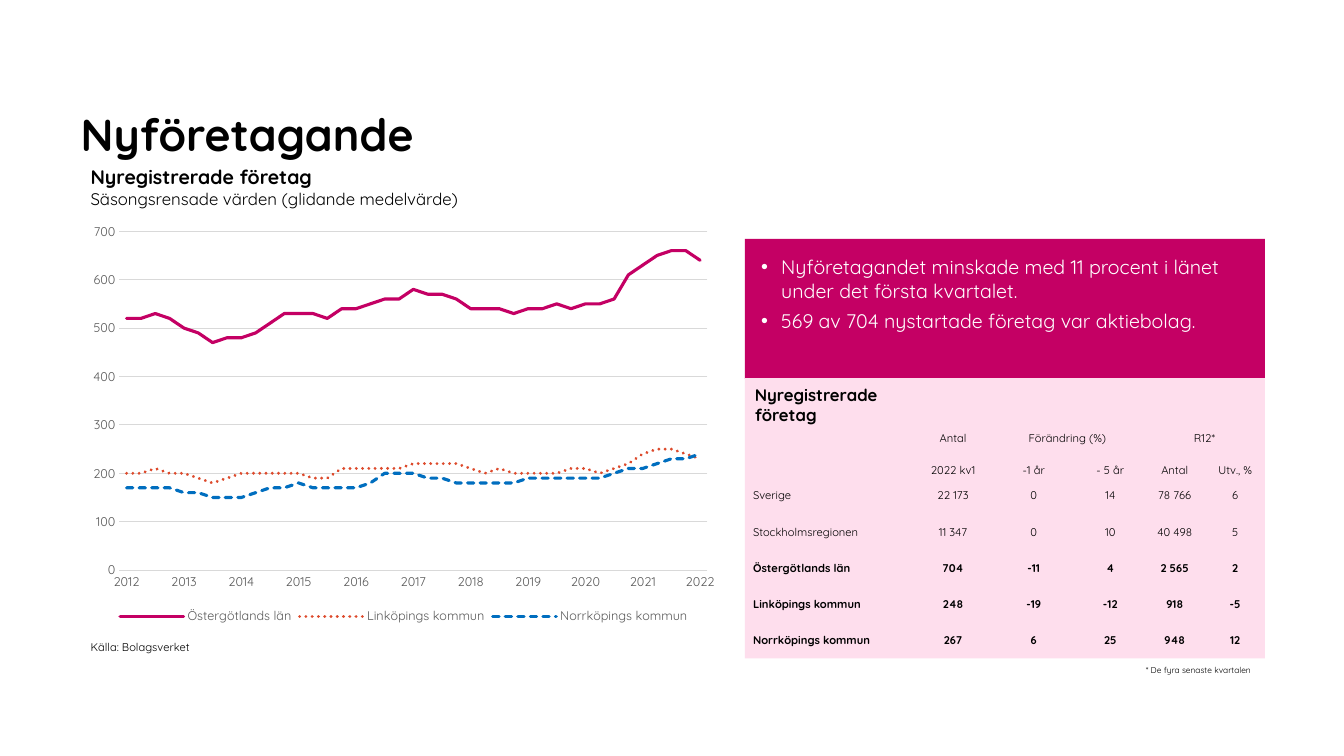
from lxml import etree
from pptx import Presentation
from pptx.chart.data import CategoryChartData
from pptx.dml.color import RGBColor
from pptx.enum.chart import XL_CHART_TYPE, XL_LEGEND_POSITION, XL_TICK_MARK
from pptx.enum.dml import MSO_LINE_DASH_STYLE
from pptx.enum.shapes import MSO_SHAPE
from pptx.enum.text import MSO_ANCHOR, MSO_AUTO_SIZE, PP_ALIGN
from pptx.oxml.ns import qn
from pptx.util import Pt

LEFT, CENTER = PP_ALIGN.LEFT, PP_ALIGN.CENTER
MIDDLE, BOTTOM = MSO_ANCHOR.MIDDLE, MSO_ANCHOR.BOTTOM
NO_TICK = XL_TICK_MARK.NONE
SOLID = MSO_LINE_DASH_STYLE.SOLID
DOTS = MSO_LINE_DASH_STYLE.ROUND_DOT
DASHES = MSO_LINE_DASH_STYLE.SQUARE_DOT
FONT = "Quicksand"
PLAIN_TABLE_STYLE = "{2D5ABB26-0587-4C30-8999-92F81FD0307C}"
COLORS = {"black": "000000", "white": "FFFFFF", "grey": "595959", "grid": "D9D9D9",
          "magenta": "C40064", "pink": "FEDEED", "orange": "DD4A2C", "blue": "006EBF"}
YEARS = range(2012, 2023)
SERIES = [
    ("Östergötlands län", "magenta", SOLID,
     [520, 520, 530, 520, 500, 490, 470, 480, 480, 490, 510, 530, 530, 530, 520,
      540, 540, 550, 560, 560, 580, 570, 570, 560, 540, 540, 540, 530, 540, 540,
      550, 540, 550, 550, 560, 610, 630, 650, 660, 660, 640]),
    ("Linköpings kommun", "orange", DOTS,
     [200, 200, 210, 200, 200, 190, 180, 190, 200, 200, 200, 200, 200, 190, 190,
      210, 210, 210, 210, 210, 220, 220, 220, 220, 210, 200, 210, 200, 200, 200,
      200, 210, 210, 200, 210, 220, 240, 250, 250, 240, 230]),
    ("Norrköpings kommun", "blue", DASHES,
     [170, 170, 170, 170, 160, 160, 150, 150, 150, 160, 170, 170, 180, 170, 170,
      170, 170, 180, 200, 200, 200, 190, 190, 180, 180, 180, 180, 180, 190, 190,
      190, 190, 190, 190, 200, 210, 210, 220, 230, 230, 240]),
]
COLUMN_WIDTHS = [121.7, 54, 61.2, 48.2, 43.9, 42.5]
ROW_HEIGHTS = [21.6, 23] + [25.9] * 5
HEADER_ROWS = 2
FIRST_BOLD_ROW = 4
ROWS = [
    ["", "Antal", "Förändring (%)", "", "R12*", ""],
    ["", "2022 kv1", "-1 år", "- 5 år", "Antal", "Utv., %"],
    ["Sverige", "22 173", "0", "14", "78 766", "6"],
    ["Stockholmsregionen", "11 347", "0", "10", "40 498", "5"],
    ["Östergötlands län", "704", "-11", "4", "2 565", "2"],
    ["Linköpings kommun", "248", "-19", "-12", "918", "-5"],
    ["Norrköpings kommun", "267", "6", "25", "948", "12"],
]
BULLETS = ["Nyföretagandet minskade med 11 procent i länet under det första kvartalet.",
           "569 av 704 nystartade företag var aktiebolag."]


def rgb(name):
    """Return the named colour."""
    return RGBColor.from_string(COLORS[name])


def format_font(font, size, color="black", bold=False):
    """Set face, size, colour and weight of a font."""
    font.name, font.size, font.bold = FONT, Pt(size), bold
    font.color.rgb = rgb(color)


def set_margins(text_frame, margin):
    """Give a text frame the same margin on all four sides."""
    text_frame.margin_left = text_frame.margin_right = Pt(margin)
    text_frame.margin_top = text_frame.margin_bottom = Pt(margin)


def place(shape, left, top, width, height):
    """Move and size a shape, in points."""
    shape.left, shape.top = Pt(left), Pt(top)
    shape.width, shape.height = Pt(width), Pt(height)


def add_label(slide, text, left, top, width, height, formats):
    """Add a text box whose runs take the given sizes and weights."""
    text_frame = slide.shapes.add_textbox(Pt(left), Pt(top), Pt(width), Pt(height)).text_frame
    text_frame.word_wrap = True
    text_frame.text = text
    for run, (size, bold) in zip(text_frame.paragraphs[0].runs, formats):
        format_font(run.font, size, bold=bold)


def add_title(slide, left, top, width, height):
    """Fill the title placeholder."""
    title = slide.shapes.title
    place(title, left, top, width, height)
    text_frame = title.text_frame
    text_frame.text = "Nyföretagande"
    text_frame.vertical_anchor = BOTTOM
    text_frame.auto_size = MSO_AUTO_SIZE.NONE
    set_margins(text_frame, 0)
    paragraph = text_frame.paragraphs[0]
    paragraph.alignment = LEFT
    format_font(paragraph.runs[0].font, 32, bold=True)


def add_bullets(slide, left, top, width, height):
    """Fill the body placeholder as a magenta panel with bullets."""
    body = slide.placeholders[1]
    place(body, left, top, width, height)
    body.fill.solid()
    body.fill.fore_color.rgb = rgb("magenta")
    text_frame = body.text_frame
    text_frame.text = "\n".join(BULLETS)
    text_frame.auto_size = MSO_AUTO_SIZE.NONE
    set_margins(text_frame, 11.5)
    for index, paragraph in enumerate(text_frame.paragraphs):
        paragraph.level = 4
        properties = paragraph._p.get_or_add_pPr()
        properties.set("marL", str(Pt(14.4)))
        properties.set("indent", str(Pt(-14.4)))
        etree.SubElement(properties, qn("a:buFont")).set("typeface", "Arial")
        etree.SubElement(properties, qn("a:buChar")).set("char", "•")
        paragraph.space_before = Pt(5 if index else 0)
        format_font(paragraph.runs[0].font, 14, "white")


def set_plot_area(chart, x, y, w, h):
    """Fix the inner plot area as fractions of the chart."""
    plot_area = chart._chartSpace.chart.plotArea
    for old in plot_area.findall(qn("c:layout")):
        plot_area.remove(old)
    layout = etree.Element(qn("c:layout"))
    manual = etree.SubElement(layout, qn("c:manualLayout"))
    values = {"layoutTarget": "inner", "xMode": "edge", "yMode": "edge",
              "x": x, "y": y, "w": w, "h": h}
    for name, value in values.items():
        etree.SubElement(manual, qn(f"c:{name}")).set("val", str(value))
    plot_area.insert(0, layout)


def add_line_chart(slide, left, top, width, height):
    """Add the quarterly line chart with its heading and source."""
    add_label(slide, "Nyregistrerade företag\vSäsongsrensade värden (glidande medelvärde)",
              left, top - 39, 297.4, 39, [(14, True), (12, False)])
    data = CategoryChartData()
    quarters = [label for year in YEARS for label in (str(year), "", "", "")]
    data.categories = quarters[:len(SERIES[0][3])]
    for name, _, _, values in SERIES:
        data.add_series(name, values)
    chart = slide.shapes.add_chart(XL_CHART_TYPE.LINE, Pt(left), Pt(top), Pt(width),
                                   Pt(height), data).chart
    format_font(chart.font, 10)
    chart.has_title = False
    chart.has_legend = True
    chart.legend.position = XL_LEGEND_POSITION.BOTTOM
    chart.legend.include_in_layout = False
    format_font(chart.legend.font, 9, "grey")
    for axis in (chart.category_axis, chart.value_axis):
        axis.major_tick_mark = axis.minor_tick_mark = NO_TICK
        format_font(axis.tick_labels.font, 9, "grey")
    category_axis, value_axis = chart.category_axis, chart.value_axis
    category_axis._element.find(qn("c:txPr")).find(qn("a:bodyPr")).set("rot", "-60000000")
    value_axis.minimum_scale, value_axis.maximum_scale = 0, 700
    value_axis.major_unit = 100
    value_axis.format.line.fill.background()
    for line in (category_axis.format.line, value_axis.major_gridlines.format.line):
        line.color.rgb = rgb("grid")
        line.width = Pt(0.75)
    chart.plots[0].vary_by_categories = False
    for series, (_, color, dash, _) in zip(chart.plots[0].series, SERIES):
        series.smooth = False
        line = series.format.line
        line.color.rgb = rgb(color)
        line.width = Pt(2.25)
        line.dash_style = dash
        line._ln.set("cap", "rnd")
    set_plot_area(chart, 0.06, 0.04, 0.91, 0.82)
    add_label(slide, "Källa: Bolagsverket", left, top + height + 5, 90.7, 17.3, [(8, False)])


def add_figures(slide, left, top, width, height):
    """Add the pink panel with its heading, table and footnote."""
    panel = slide.shapes.add_shape(MSO_SHAPE.RECTANGLE, Pt(left), Pt(top), Pt(width), Pt(height))
    panel.shadow.inherit = False
    panel.fill.solid()
    panel.fill.fore_color.rgb = rgb("pink")
    panel.line.fill.background()
    add_label(slide, "Nyregistrerade företag", left, top + 1.4, 146.9, 21.6, [(12, True)])
    table = slide.shapes.add_table(len(ROWS), len(COLUMN_WIDTHS), Pt(left), Pt(top + 26.6),
                                   Pt(width), Pt(sum(ROW_HEIGHTS))).table
    table.first_row = table.horz_banding = False
    table._tbl.tblPr.find(qn("a:tableStyleId")).text = PLAIN_TABLE_STYLE
    for column, column_width in zip(table.columns, COLUMN_WIDTHS):
        column.width = Pt(column_width)
    for row, row_height in zip(table.rows, ROW_HEIGHTS):
        row.height = Pt(row_height)
    for row_index, texts in enumerate(ROWS):
        for column_index, text in enumerate(texts):
            cell = table.cell(row_index, column_index)
            cell.fill.background()
            cell.text = text
            cell.vertical_anchor = BOTTOM if row_index < HEADER_ROWS else MIDDLE
            cell.margin_left = Pt(0 if column_index else 5.8)
            cell.margin_right = cell.margin_top = cell.margin_bottom = Pt(0)
            paragraph = cell.text_frame.paragraphs[0]
            paragraph.alignment = CENTER if column_index else LEFT
            paragraph._p.get_or_add_endParaRPr().set("sz", "800")
            for run in paragraph.runs:
                format_font(run.font, 8, bold=row_index >= FIRST_BOLD_ROW)
    for first in (2, 4):
        table.cell(0, first).merge(table.cell(0, first + 1))
    add_label(slide, "* De fyra senaste kvartalen", left + width - 92.2, top + height + 1.4,
              93, 14.4, [(6, False)])


def main():
    """Build and save the slide."""
    presentation = Presentation()
    presentation.slide_width, presentation.slide_height = Pt(960), Pt(540)
    slide = presentation.slides.add_slide(presentation.slide_layouts[1])
    add_title(slide, 57.6, 26.6, 663.8, 87.8)
    add_line_chart(slide, 57.6, 153.4, 461.5, 295.2)
    add_figures(slide, 532.1, 270, 371.5, 200.2)
    add_bullets(slide, 532.1, 170.6, 371.5, 100)
    presentation.save("out.pptx")


if __name__ == "__main__":
    main()
